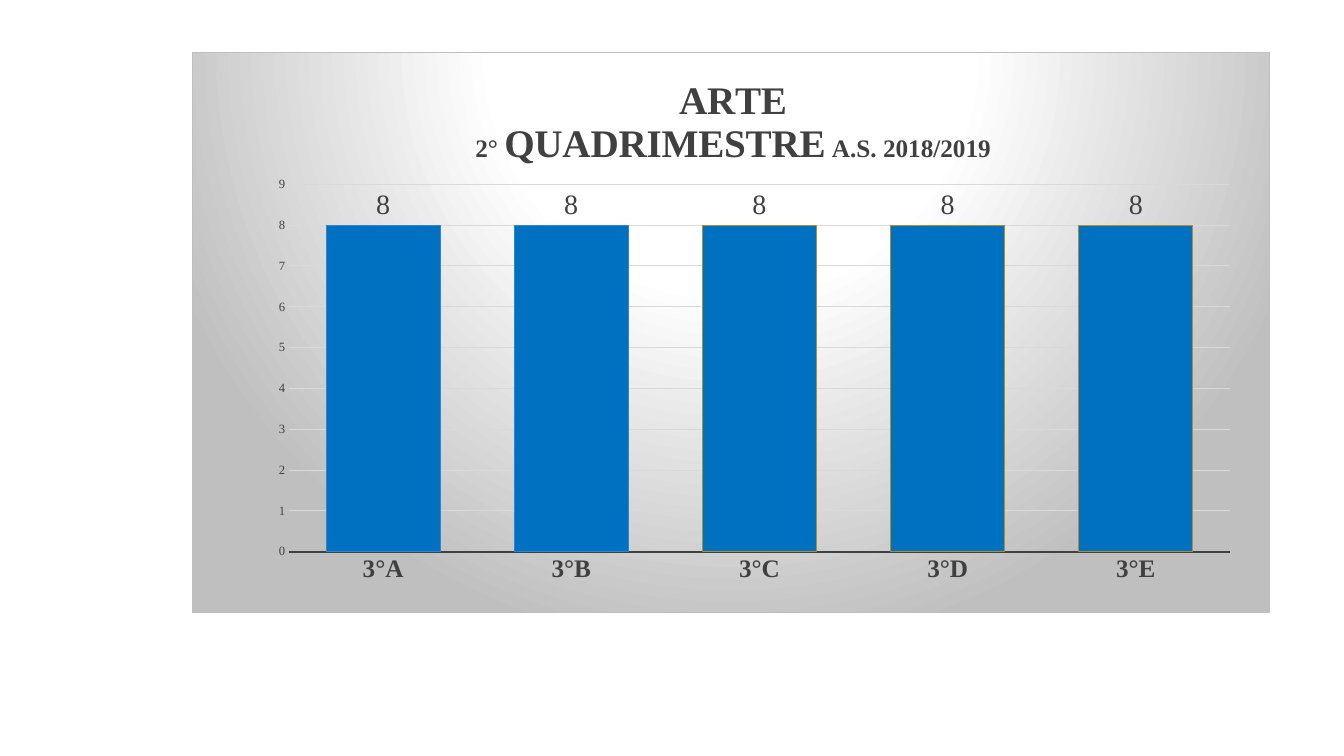
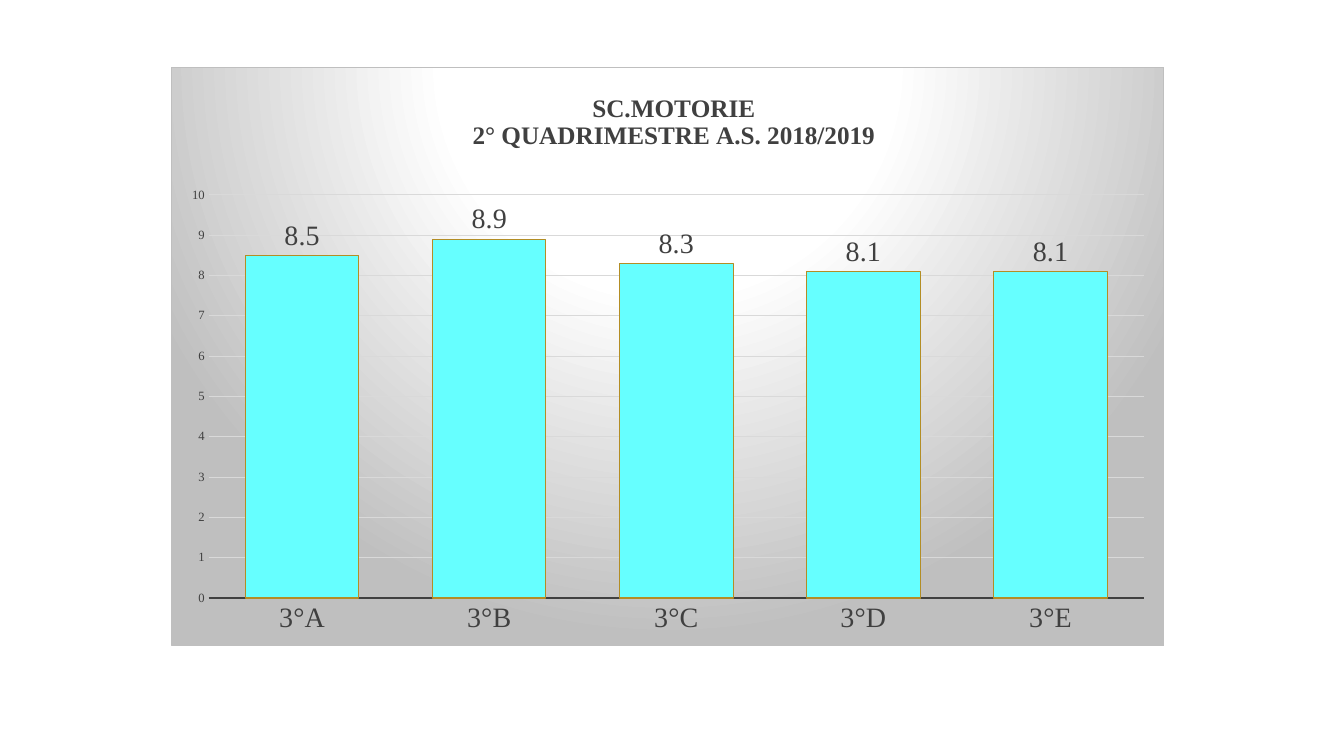
from dataclasses import dataclass

from lxml import etree
from pptx import Presentation
from pptx.chart.chart import Chart
from pptx.chart.data import CategoryChartData
from pptx.dml.color import RGBColor
from pptx.enum import chart as ch
from pptx.oxml import parse_xml
from pptx.oxml.ns import nsdecls, qn
from pptx.text.text import Font
from pptx.util import Inches, Pt

FONT = "Times New Roman"
BLACK = RGBColor(0x00, 0x00, 0x00)
DARK = RGBColor(0x40, 0x40, 0x40)
GRID = RGBColor(0xD9, 0xD9, 0xD9)
WHITE = RGBColor(0xFF, 0xFF, 0xFF)
SILVER = RGBColor(0xBF, 0xBF, 0xBF)
GOLD = RGBColor(0xB3, 0x8D, 0x25)
BLUE = RGBColor(0x00, 0x70, 0xC0)
SKY = RGBColor(0x2E, 0x86, 0xCE)
CYAN = RGBColor(0x66, 0xFF, 0xFF)

CLASSES = ("3°A", "3°B", "3°C", "3°D", "3°E")
TitleLine = tuple[tuple[str, int], ...]  # runs of (text, size)


@dataclass(frozen=True)
class GradeChart:
    box: tuple[float, float, float, float]
    title: tuple[TitleLine, ...]
    title_at: tuple[float, float]
    plot: tuple[float, float, float, float]
    grades: tuple[float, ...]
    top_grade: int
    color: RGBColor
    class_size: int
    class_bold: bool = False
    blue_edged: int = 0  # leading bars with a blue outline


CHARTS = (
    GradeChart(
        box=(1.9, 0.52, 10.7, 5.56),
        title=((("ARTE", 28),),
               (("2° ", 18), ("QUADRIMESTRE", 28), (" A.S. 2018/2019", 18))),
        title_at=(0.26, 0.04),
        plot=(0.09, 0.235, 0.873, 0.657),
        grades=(8, 8, 8, 8, 8), top_grade=9, color=BLUE,
        class_size=18, class_bold=True, blue_edged=2),
    GradeChart(
        box=(1.7, 0.66, 9.85, 5.75),
        title=((("SC.MOTORIE", 18),),
               (("2° QUADRIMESTRE A.S. 2018/2019", 18),)),
        title_at=(0.3, 0.04),
        plot=(0.037, 0.221, 0.943, 0.697),
        grades=(8.5, 8.9, 8.3, 8.1, 8.1), top_grade=10, color=CYAN,
        class_size=20),
)


def style_font(font: Font, size: int, color: RGBColor = DARK,
               bold: bool = False) -> None:
    font.name, font.size, font.bold = FONT, Pt(size), bold
    font.color.rgb = color


def set_layout(parent: etree._Element, index: int, **settings: object) -> None:
    """Place a chart part by hand, in fractions of the chart's size."""
    old = parent.find(qn("c:layout"))
    if old is not None:
        parent.remove(old)
    parts = "".join(f'<c:{tag} val="{val}"/>' for tag, val in settings.items())
    parent.insert(index, parse_xml(
        f'<c:layout {nsdecls("c")}><c:manualLayout>{parts}'
        "</c:manualLayout></c:layout>"))


def fill_background(chart: Chart) -> None:
    """Give the chart area a round white-to-grey gradient and a thin border."""
    stops = "".join(
        f'<a:gs pos="{pos}000"><a:srgbClr val="{color}"/></a:gs>'
        for pos, color in ((0, WHITE), (39, WHITE), (100, SILVER)))
    chart.element.find(qn("c:chart")).addnext(parse_xml(
        f'<c:spPr {nsdecls("c", "a")}>'
        f'<a:gradFill><a:gsLst>{stops}</a:gsLst><a:path path="circle">'
        '<a:fillToRect l="50000" t="-80000" r="50000" b="180000"/></a:path>'
        f'</a:gradFill><a:ln w="{Pt(0.75)}"><a:solidFill>'
        f'<a:srgbClr val="{SILVER}"/></a:solidFill></a:ln></c:spPr>'))


def write_title(chart: Chart, spec_: GradeChart) -> None:
    tf = chart.chart_title.text_frame
    for i, line in enumerate(spec_.title):
        p = tf.add_paragraph() if i else tf.paragraphs[0]
        for words, size in line:
            r = p.add_run()
            r.text = words
            style_font(r.font, size, bold=True)
    x, y = spec_.title_at
    set_layout(chart.chart_title.element, 1, xMode="edge", yMode="edge",
               x=x, y=y)


def style_axes(chart: Chart, spec_: GradeChart) -> None:
    cat, val = chart.category_axis, chart.value_axis
    for axis in (cat, val):
        axis.major_tick_mark = axis.minor_tick_mark = ch.XL_TICK_MARK.NONE
    style_font(cat.tick_labels.font, spec_.class_size, bold=spec_.class_bold)
    cat.format.line.color.rgb = DARK
    cat.format.line.width = Pt(1.5)
    style_font(val.tick_labels.font, 9)
    val.minimum_scale, val.maximum_scale = 0, spec_.top_grade
    val.major_unit = 1
    val.format.line.fill.background()
    val.has_major_gridlines = True
    val.major_gridlines.format.line.color.rgb = GRID
    val.major_gridlines.format.line.width = Pt(0.75)


def style_bars(chart: Chart, spec_: GradeChart) -> None:
    plot = chart.plots[0]
    plot.gap_width = 65
    plot.vary_by_categories = False
    bars = plot.series[0]
    edged = [(bars, GOLD)]
    edged += [(bars.points[i], SKY) for i in range(spec_.blue_edged)]
    for part, edge in edged:
        part.format.fill.solid()
        part.format.fill.fore_color.rgb = spec_.color
        part.format.line.color.rgb = edge
        part.format.line.width = Pt(0.75)
    labels = bars.data_labels
    labels.show_value = True
    labels.position = ch.XL_LABEL_POSITION.OUTSIDE_END
    style_font(labels.font, 20)


def add_grade_slide(prs: Presentation, spec_: GradeChart) -> None:
    s = prs.slides.add_slide(prs.slide_layouts[6])
    data = CategoryChartData()
    data.categories = CLASSES
    data.add_series("Series 1", spec_.grades)
    chart = s.shapes.add_chart(ch.XL_CHART_TYPE.COLUMN_CLUSTERED,
                               *map(Inches, spec_.box), data).chart
    style_font(chart.font, 10, BLACK)
    chart.has_legend = False
    fill_background(chart)
    write_title(chart, spec_)
    style_axes(chart, spec_)
    style_bars(chart, spec_)
    x, y, w, h = spec_.plot
    set_layout(chart.element.find(".//" + qn("c:plotArea")), 0,
               layoutTarget="inner", xMode="edge", yMode="edge",
               x=x, y=y, w=w, h=h)


def main() -> None:
    prs = Presentation()
    prs.slide_width, prs.slide_height = Inches(13.33), Inches(7.5)
    for spec_ in CHARTS:
        add_grade_slide(prs, spec_)
    prs.save("out.pptx")


if __name__ == "__main__":
    main()
